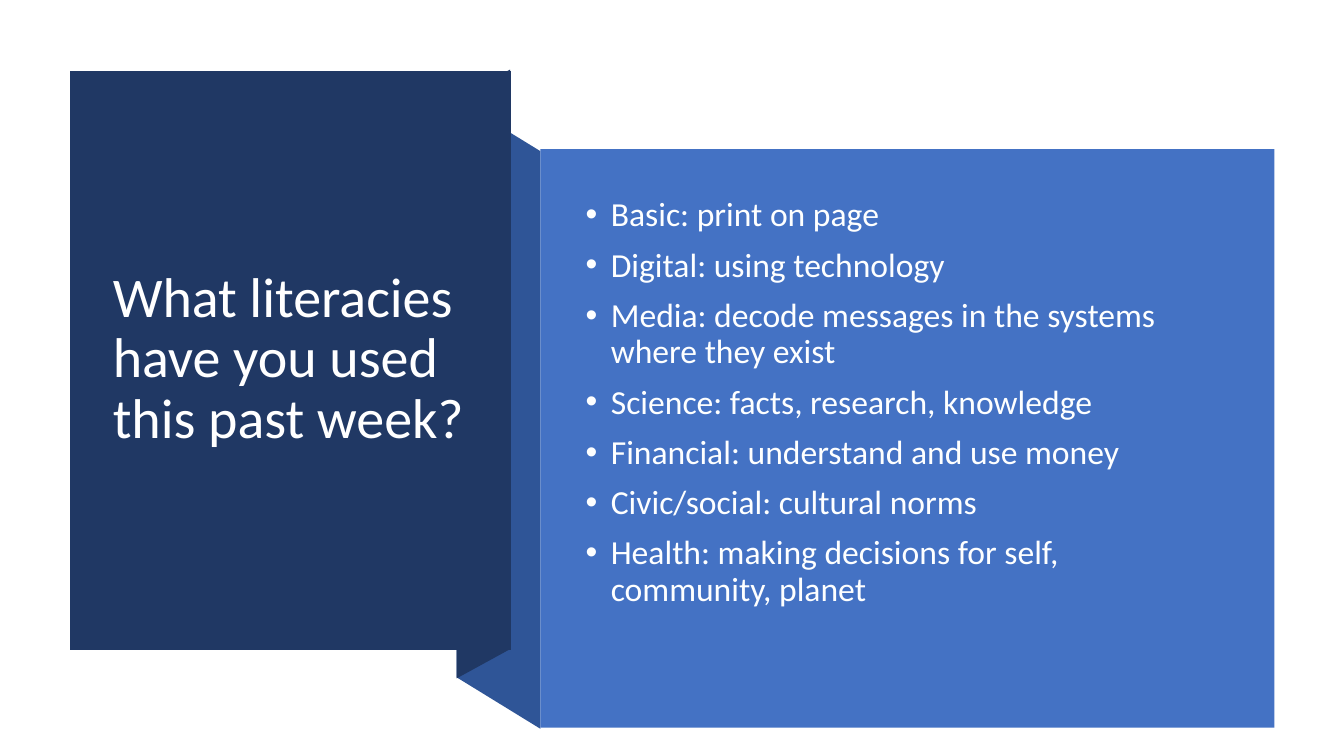
from dataclasses import dataclass

from lxml.etree import SubElement
from pptx import Presentation
from pptx.dml.color import RGBColor
from pptx.enum.shapes import MSO_SHAPE
from pptx.enum.text import MSO_ANCHOR
from pptx.oxml.ns import qn
from pptx.util import Pt

SCALE = 9144


def px(n):
    return n * SCALE


@dataclass(frozen=True)
class Theme:
    font: str = "Calibri"
    navy: str = "203864"
    fold: str = "2F5597"
    blue: str = "4472C4"
    white: str = "FFFFFF"
    soft: str = "FEFFFF"
    title: int = 40
    body: int = 24


def write(para, text, *, font, size, color, before=0, indent=0):
    para.line_spacing = 0.9
    para.space_before = Pt(before)
    run = para.add_run()
    run.text = text
    run.font.name = font
    run.font.size = Pt(size)
    run.font.color.rgb = RGBColor.from_string(color)
    if indent:
        props = para._p.get_or_add_pPr()
        props.set("marL", str(px(indent)))
        props.set("indent", str(-px(indent)))
        SubElement(props, qn("a:buFont")).set("typeface", "Arial")
        SubElement(props, qn("a:buChar")).set("char", "•")


class Deck:
    def __init__(self, theme):
        self.theme = theme
        self.show = Presentation()
        self.show.slide_width = px(1333)
        self.show.slide_height = px(750)
        self.slide = self.show.slides.add_slide(self.show.slide_layouts[6])

    def paint(self, shape, color):
        shape.shadow.inherit = False
        shape.fill.solid()
        shape.fill.fore_color.rgb = RGBColor.from_string(color)
        shape.line.fill.background()

    def outline(self, points, color):
        path = self.slide.shapes.build_freeform(*points[0], scale=SCALE)
        path.add_line_segments(points[1:], close=True)
        self.paint(path.convert_to_shape(), color)

    def rect(self, x, y, w, h, color):
        shape = self.slide.shapes.add_shape(
            MSO_SHAPE.RECTANGLE, px(x), px(y), px(w), px(h))
        self.paint(shape, color)

    def text(self, x, y, w, h, lines, **style):
        box = self.slide.shapes.add_textbox(px(x), px(y), px(w), px(h))
        frame = box.text_frame
        frame.word_wrap = True
        frame.vertical_anchor = MSO_ANCHOR.MIDDLE
        for i, line in enumerate(lines):
            para = frame.add_paragraph() if i else frame.paragraphs[0]
            write(para, line, font=self.theme.font, **style)


def main():
    theme = Theme()
    deck = Deck(theme)
    deck.outline([(536, 723), (453, 672), (453, 99), (536, 150)], theme.fold)
    deck.outline([(506, 644), (453, 673), (453, 98), (506, 69)], theme.navy)
    deck.outline([(69, 70), (507, 70), (507, 645), (69, 645)], theme.navy)
    deck.text(102, 107, 371, 499,
              ["What literacies have you used this past week?"],
              size=theme.title, color=theme.white)
    deck.rect(536, 148, 728, 574, theme.blue)
    deck.text(571, 188, 651, 424, [
        "Basic: print on page",
        "Digital: using technology",
        "Media: decode messages in the systems where they exist",
        "Science: facts, research, knowledge",
        "Financial: understand and use money",
        "Civic/social: cultural norms",
        "Health: making decisions for self, community, planet",
    ], size=theme.body, color=theme.soft, before=10, indent=25)
    deck.show.save("out.pptx")


if __name__ == "__main__":
    main()
